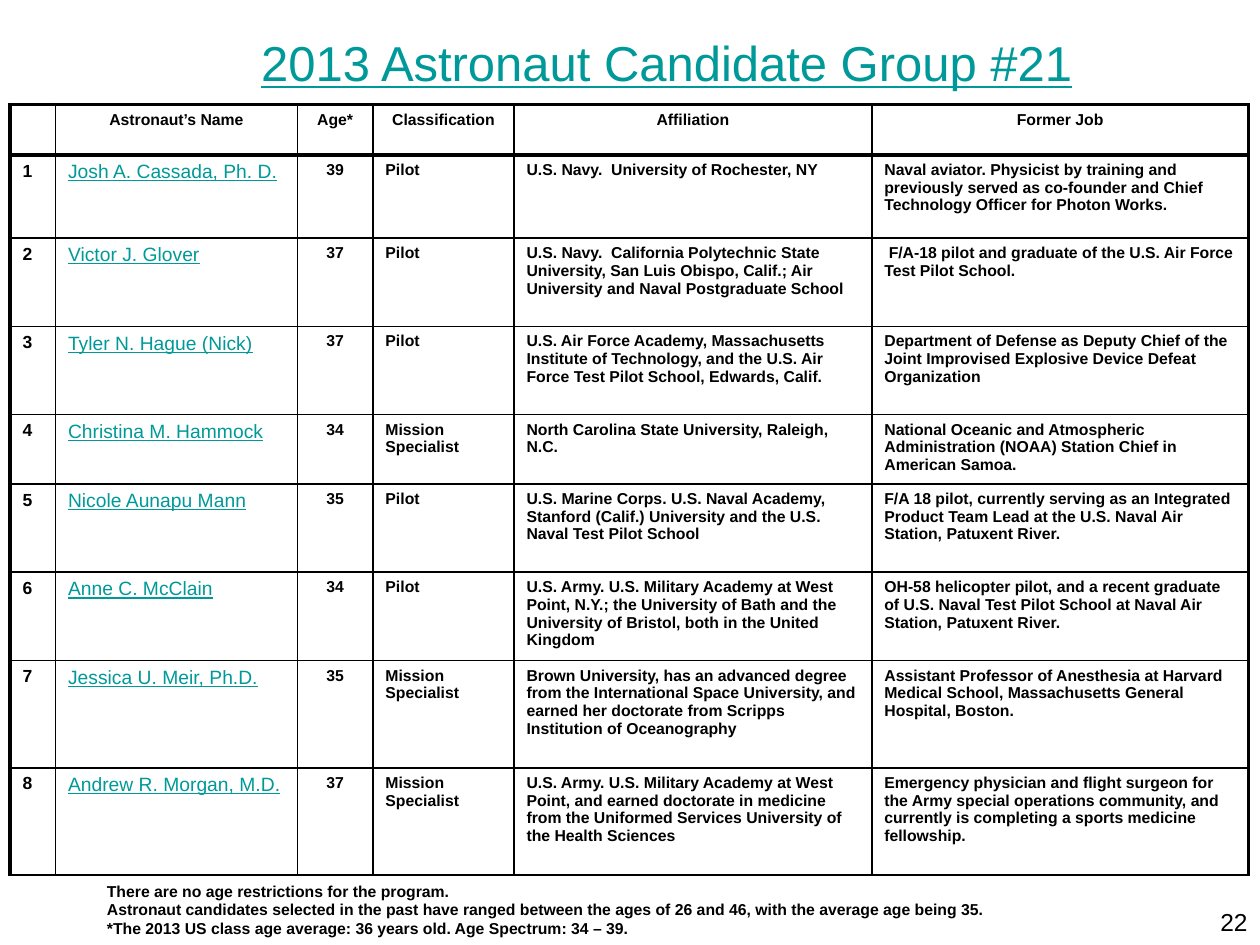
from lxml.etree import SubElement
from pptx import Presentation
from pptx.dml.color import RGBColor
from pptx.enum.text import MSO_ANCHOR as Anchor, PP_ALIGN as Align
from pptx.oxml.ns import qn
from pptx.util import Inches, Pt

COLORS = {"text": "000000", "link": "009999", "paper": "FFFFFF"}
FONT = "Arial"
THIN, THICK = 1, 2.25

# Content
TITLE = "2013 Astronaut Candidate Group #21"
HEADER = ("", "Astronaut’s Name", "Age*", "Classification", "Affiliation", "Former Job")
CANDIDATES = [
    ("Josh A. Cassada, Ph. D.", 39, "Pilot",
     "U.S. Navy.  University of Rochester, NY",
     "Naval aviator. Physicist by training and previously served as co-founder "
     "and Chief Technology Officer for Photon Works."),
    ("Victor J. Glover", 37, "Pilot",
     "U.S. Navy.  California Polytechnic State University, San Luis Obispo, "
     "Calif.; Air University and Naval Postgraduate School",
     " F/A-18 pilot and graduate of the U.S. Air Force Test Pilot School."),
    ("Tyler N. Hague (Nick)", 37, "Pilot",
     "U.S. Air Force Academy, Massachusetts Institute of Technology, and the "
     "U.S. Air Force Test Pilot School, Edwards, Calif.",
     "Department of Defense as Deputy Chief of the Joint Improvised Explosive "
     "Device Defeat Organization"),
    ("Christina M. Hammock", 34, "Mission Specialist",
     "North Carolina State University, Raleigh, N.C.",
     "National Oceanic and Atmospheric Administration (NOAA) Station Chief in "
     "American Samoa."),
    ("Nicole Aunapu Mann", 35, "Pilot",
     "U.S. Marine Corps. U.S. Naval Academy, Stanford (Calif.) University and "
     "the U.S. Naval Test Pilot School",
     "F/A 18 pilot, currently serving as an Integrated Product Team Lead at "
     "the U.S. Naval Air Station, Patuxent River."),
    ("Anne C. McClain", 34, "Pilot",
     "U.S. Army. U.S. Military Academy at West Point, N.Y.; the University of "
     "Bath and the University of Bristol, both in the United Kingdom",
     "OH-58 helicopter pilot, and a recent graduate of U.S. Naval Test Pilot "
     "School at Naval Air Station, Patuxent River."),
    ("Jessica U. Meir, Ph.D.", 35, "Mission Specialist",
     "Brown University, has an advanced degree from the International Space "
     "University, and earned her doctorate from Scripps Institution of Oceanography",
     "Assistant Professor of Anesthesia at Harvard Medical School, "
     "Massachusetts General Hospital, Boston."),
    ("Andrew R. Morgan, M.D.", 37, "Mission Specialist",
     "U.S. Army. U.S. Military Academy at West Point, and earned doctorate in "
     "medicine from the Uniformed Services University of the Health Sciences",
     "Emergency physician and flight surgeon for the Army special operations "
     "community, and currently is completing a sports medicine fellowship."),
]
NOTES = [
    "There are no age restrictions for the program.",
    "Astronaut candidates selected in the past have ranged between the ages of "
    "26 and 46, with the average age being 35.",
    "*The 2013 US class age average: 36 years old. Age Spectrum: 34 – 39.",
]
PAGE_NUMBER = "22"
COLUMN_WIDTHS = (0.36, 1.92, 0.6, 1.12, 2.84, 2.99)
ROW_HEIGHTS = (0.4, 0.66, 0.7, 0.7, 0.55, 0.7, 0.7, 0.85, 0.85)
NUMBER, NAME, AGE = 0, 1, 2


def style(para, size, color="text", bold=False, underline=False, align=Align.LEFT):
    para.alignment = align
    font = para.font
    font.name, font.size = FONT, Pt(size)
    font.bold, font.underline = bold, underline
    font.color.rgb = RGBColor.from_string(COLORS[color])


def add_text(page, area, lines, anchor=Anchor.TOP, **look):
    frame = page.shapes.add_textbox(*map(Inches, area)).text_frame
    frame.word_wrap = True
    frame.vertical_anchor = anchor
    frame.text = "\n".join(lines)
    for para in frame.paragraphs:
        style(para, **look)


def set_borders(cell, widths):
    """Draw the left, right, top and bottom lines, in that order."""
    properties = cell._tc.get_or_add_tcPr()
    for place, (side, width) in enumerate(zip("LRTB", widths)):
        line = SubElement(properties, qn(f"a:ln{side}"), w=str(int(Pt(width))))
        fill = SubElement(line, qn("a:solidFill"))
        SubElement(fill, qn("a:srgbClr"), val=COLORS["text"])
        properties.insert(place, line)


def cell_look(row, column):
    if row == 0:
        return dict(size=9, bold=True, align=Align.CENTER)
    if column == NUMBER:
        return dict(size=10, bold=True)
    if column == NAME:
        return dict(size=11, color="link", underline=True)
    return dict(size=9, bold=True, align=Align.CENTER if column == AGE else Align.LEFT)


def add_candidates(page):
    rows = [HEADER] + [(i, *person) for i, person in enumerate(CANDIDATES, 1)]
    table = page.shapes.add_table(
        len(rows), len(HEADER), Inches(0.08), Inches(0.83),
        Inches(sum(COLUMN_WIDTHS)), Inches(sum(ROW_HEIGHTS))).table
    table.first_row = table.horz_banding = False
    for column, width in zip(table.columns, COLUMN_WIDTHS):
        column.width = Inches(width)
    for row, height in zip(table.rows, ROW_HEIGHTS):
        row.height = Inches(height)

    last = len(HEADER) - 1
    for r, values in enumerate(rows):
        for c, value in enumerate(values):
            cell = table.cell(r, c)
            cell.text = str(value)
            style(cell.text_frame.paragraphs[0], **cell_look(r, c))
            cell.fill.solid()
            cell.fill.fore_color.rgb = RGBColor.from_string(COLORS["paper"])
            # Heavy outer frame and header rule, thin grid elsewhere
            heavy = (c == 0, c == last, r <= 1, r == 0)
            set_borders(cell, [THICK if side else THIN for side in heavy])


def main():
    deck = Presentation()
    deck.slide_width, deck.slide_height = Inches(10), Inches(7.5)
    page = deck.slides.add_slide(deck.slide_layouts[6])
    add_text(page, (1.75, 0.08, 7.08, 0.83), [TITLE], Anchor.MIDDLE,
             size=28, color="link", underline=True, align=Align.CENTER)
    add_candidates(page)
    add_text(page, (0.75, 6.94, 9.08, 0.56), NOTES, Anchor.MIDDLE, size=9, bold=True)
    add_text(page, (7.67, 7.15, 2.33, 0.35), [PAGE_NUMBER], size=14, align=Align.RIGHT)
    deck.save("out.pptx")


if __name__ == "__main__":
    main()
